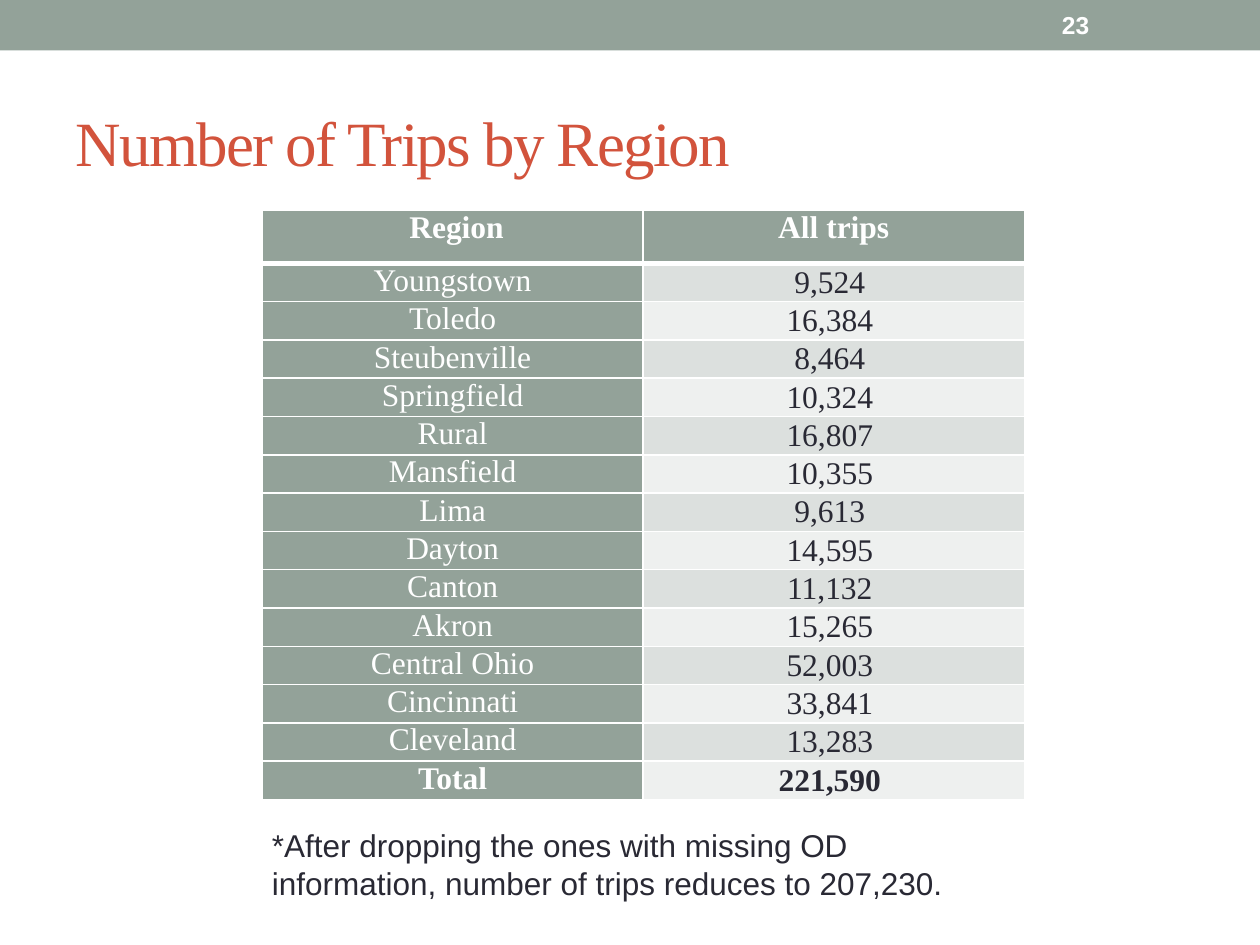
from lxml.etree import SubElement as Sub
from pptx import Presentation
from pptx.dml.color import RGBColor as RGB
from pptx.enum.shapes import MSO_SHAPE as Shape
from pptx.enum.text import MSO_ANCHOR as Anchor, PP_ALIGN as Align
from pptx.oxml.ns import qn
from pptx.util import Inches, Pt

SAGE = RGB(0x93, 0xA2, 0x99)
RUST = RGB(0xD2, 0x53, 0x3C)
INK = RGB(0x29, 0x29, 0x34)
WHITE = RGB(0xFF, 0xFF, 0xFF)
BANDS = RGB(0xDC, 0xE0, 0xDE), RGB(0xEE, 0xF0, 0xEF)
SERIF, SANS = "Times New Roman", "Arial"

TRIPS = [
    ("Youngstown", 9524), ("Toledo", 16384), ("Steubenville", 8464),
    ("Springfield", 10324), ("Rural", 16807), ("Mansfield", 10355),
    ("Lima", 9613), ("Dayton", 14595), ("Canton", 11132),
    ("Akron", 15265), ("Central Ohio", 52003), ("Cincinnati", 33841),
    ("Cleveland", 13283),
]


def write(frame, text, font=SERIF, size=18, color=INK, bold=False,
          align=Align.LEFT, anchor=Anchor.TOP, gap=None):
    """Put one formatted run into a text frame."""
    frame.word_wrap = True
    frame.vertical_anchor = anchor
    para = frame.paragraphs[0]
    para.alignment = align
    run = para.add_run()
    run.text = text
    face = run.font
    face.name, face.size, face.bold = font, Pt(size), bold
    face.color.rgb = color
    if gap is not None:
        face._element.set("spc", str(gap * 100))


def edge(cell, side, width):
    """Draw a white border on one side of a cell."""
    line = Sub(cell._tc.get_or_add_tcPr(), qn(f"a:ln{side}"), w=str(Pt(width)))
    fill = Sub(line, qn("a:solidFill"))
    Sub(fill, qn("a:srgbClr"), val=str(WHITE))


class Page:
    """A slide on a grid of 100 columns and 75 rows."""

    def __init__(self, deck):
        self.slide = deck.slides.add_slide(deck.slide_layouts[5])
        self.shapes = self.slide.shapes
        self.col = deck.slide_width / 100
        self.row = deck.slide_height / 75

    def area(self, x, y, w, h):
        return (round(x * self.col), round(y * self.row),
                round(w * self.col), round(h * self.row))

    def bar(self, *box, color=SAGE):
        bar = self.shapes.add_shape(Shape.RECTANGLE, *self.area(*box))
        bar.shadow.inherit = False
        bar.fill.solid()
        bar.fill.fore_color.rgb = color
        bar.line.fill.background()

    def title(self, text, *box):
        head = self.shapes.title
        head.left, head.top, head.width, head.height = self.area(*box)
        write(head.text_frame, text, size=36, color=RUST,
              anchor=Anchor.MIDDLE, gap=-1)

    def text(self, text, *box, **style):
        note = self.shapes.add_textbox(*self.area(*box))
        write(note.text_frame, text, font=SANS, **style)

    def table(self, rows, *box, top):
        area = self.area(*box)
        grid = self.shapes.add_table(len(rows), len(rows[0]), *area).table
        grid.horz_banding = False
        body = round((area[3] - top * self.row) / (len(rows) - 1))
        last = len(rows) - 1
        for r, line in enumerate(rows):
            grid.rows[r].height = body if r else round(top * self.row)
            for c, text in enumerate(line):
                value = r > 0 and c > 0
                self.cell(grid.cell(r, c), text,
                          fill=BANDS[(r - 1) % 2] if value else SAGE,
                          base=1 if r else 3,
                          color=INK if value else WHITE,
                          bold=r in (0, last),
                          anchor=Anchor.MIDDLE if value else Anchor.TOP)

    def cell(self, cell, text, fill, base, anchor, **style):
        cell.margin_left = cell.margin_right = Inches(0.07)
        cell.margin_top = cell.margin_bottom = 0
        write(cell.text_frame, text, align=Align.CENTER, **style)
        cell.vertical_anchor = anchor
        for side, width in zip("LRTB", (1, 1, 1, base)):
            edge(cell, side, width)
        cell.fill.solid()
        cell.fill.fore_color.rgb = fill


def main():
    deck = Presentation()
    deck.slide_width, deck.slide_height = Inches(10), Inches(7.5)
    page = Page(deck)

    # Top band and heading
    page.bar(0, 0, 100, 4)
    page.title("Number of Trips by Region", 5, 5.8, 90, 10.8)

    # Trips table with its total
    total = sum(count for _, count in TRIPS)
    rows = [(" Region", "All trips")]
    rows += [(name, f"{count:,} ") for name, count in TRIPS + [("Total", total)]]
    page.table(rows, 20.8, 16.7, 60.5, 46.8, top=4.2)

    # Footnote and page number
    page.text("*After dropping the ones with missing OD information, "
              "number of trips reduces to 207,230.", 20.6, 65.1, 60, 7.1)
    page.text("23", 83.3, 0.2, 11.7, 3.6, size=14, color=WHITE, bold=True,
              anchor=Anchor.MIDDLE)

    deck.save("out.pptx")


if __name__ == "__main__":
    main()
